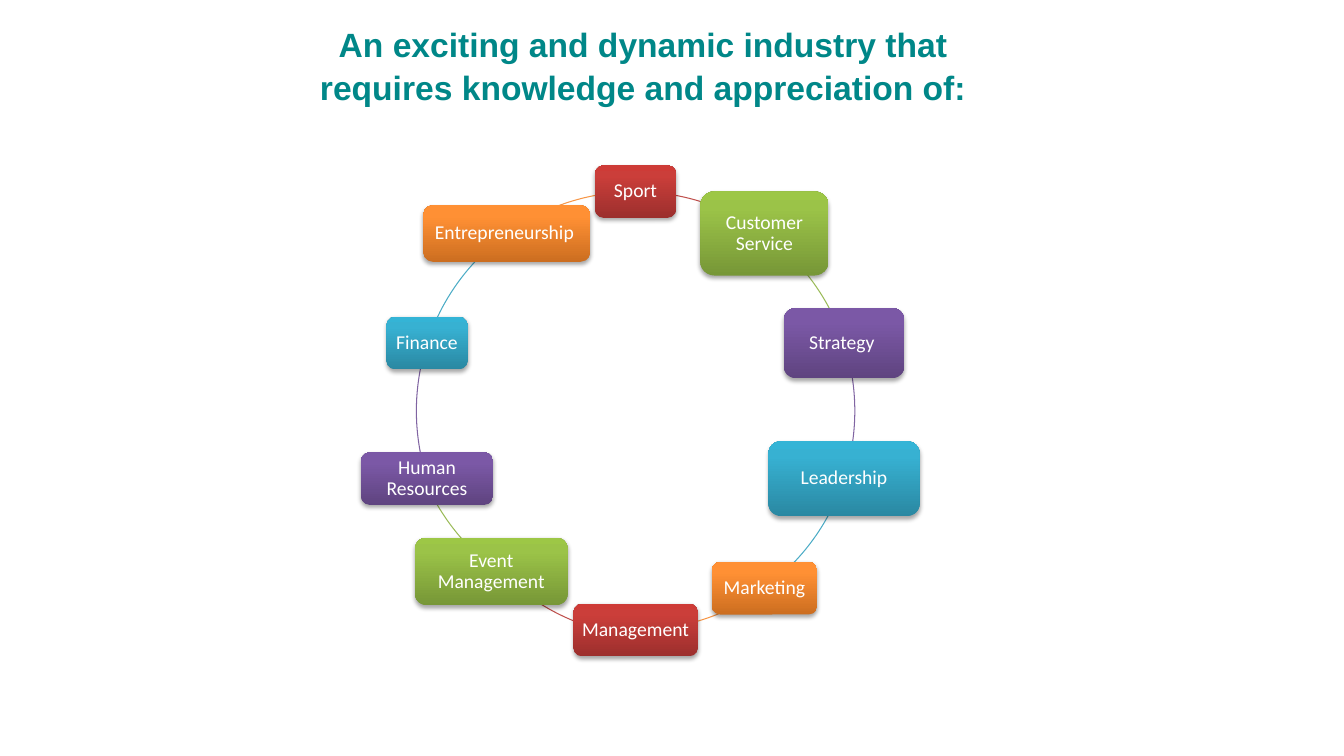
from copy import deepcopy
from math import cos, radians, sin

from pptx import Presentation
from pptx.dml.color import RGBColor as RGB
from pptx.enum.shapes import MSO_SHAPE as SHAPE
from pptx.enum.text import MSO_ANCHOR as ANCHOR, MSO_AUTO_SIZE as AUTO, PP_ALIGN as ALIGN
from pptx.oxml import parse_xml
from pptx.oxml.ns import nsdecls, qn
from pptx.util import Pt

COLORS = {
    "title": "008788",
    "text": "FFFFFF",
    "red": ("C0504D", "9C2F2D", "CB3E3A", "CE3B37"),
    "green": ("9BBB59", "779737", "9BC348", "9DC746"),
    "purple": ("8064A2", "5F4480", "7B58A6", "7C57A8"),
    "blue": ("4BACC6", "2A88A2", "37B1D2", "34B4D6"),
    "orange": ("F79646", "CC6E20", "FF9034", "FF9136"),
}
HUES = ("red", "green", "purple", "blue", "orange")
STOPS = (0, 0.8, 1)

TOPICS = (
    ("Sport", 58, 37.6),
    ("Customer Service", 91.6, 60),
    ("Strategy ", 86, 50),
    ("Leadership", 108, 53.5),
    ("Marketing", 75.6, 37.6),
    ("Management", 88.8, 37.6),
    ("Event Management", 109, 48.2),
    ("Human Resources", 94.4, 37.6),
    ("Finance", 58, 37.6),
    ("Entrepreneurship ", 119, 40.4),
)
MID_X, MID_Y, RADIUS = 454, 293.5, 156.6
STEP = 360 / len(TOPICS)
BOX_SHIFT = {"Event Management": (-11, -12)}
ARC_SHIFT = {"Management": (15, 5), "Event Management": (-6.5, -12)}

TITLE = {"size": Pt(24), "name": "Arial", "bold": True}
LABEL = {"size": Pt(14), "name": "Calibri", "bold": False}

SHADOW = (
    f'<a:outerShdw {nsdecls("a")} blurRad="40000" dist="23000" dir="5400000" '
    'rotWithShape="0"><a:srgbClr val="000000"><a:alpha val="35000"/>'
    '</a:srgbClr></a:outerShdw>'
)


def write(shape, text, style, color, inset, pitch):
    frame = shape.text_frame
    frame.word_wrap = True
    frame.auto_size = AUTO.NONE
    frame.vertical_anchor = ANCHOR.MIDDLE
    for side in ("left", "right", "top", "bottom"):
        setattr(frame, f"margin_{side}", Pt(inset))
    frame.text = text
    para = frame.paragraphs[0]
    para.alignment = ALIGN.CENTER
    para.line_spacing = pitch
    font = para.runs[0].font
    for key, value in style.items():
        setattr(font, key, value)
    font.color.rgb = RGB.from_string(color)


def add_title(slide, text):
    title = slide.shapes.title
    title.left, title.top = Pt(185), Pt(43.2)
    title.width, title.height = Pt(548.6), Pt(6)
    write(title, text, TITLE, COLORS["title"], 10, 1.06)


def add_arc(slide, start, hue, shift):
    left, top = MID_X - RADIUS + shift[0], MID_Y - RADIUS + shift[1]
    arc = slide.shapes.add_shape(
        SHAPE.ARC, Pt(left), Pt(top), Pt(2 * RADIUS), Pt(2 * RADIUS))
    for i in range(2):
        arc.adjustments[i] = (start + i * STEP) % 360 * 0.6
    arc.shadow.inherit = False
    arc.fill.background()
    arc.line.color.rgb = RGB.from_string(COLORS[hue][0])
    arc.line.width = Pt(0.75)


def shade(box, tones):
    box.fill.gradient()
    box.fill.gradient_angle = 90
    stops = box.element.spPr.find(".//" + qn("a:gsLst"))
    stops.append(deepcopy(stops[0]))
    for stop, tone, place in zip(box.fill.gradient_stops, tones, STOPS):
        stop.color.rgb = RGB.from_string(tone)
        stop.position = place


def add_box(slide, angle, hue, topic):
    text, width, height = topic
    shift = BOX_SHIFT.get(text, (0, 0))
    left = MID_X + RADIUS * cos(radians(angle)) - width / 2 + shift[0]
    top = MID_Y + RADIUS * sin(radians(angle)) - height / 2 + shift[1]
    box = slide.shapes.add_shape(
        SHAPE.ROUNDED_RECTANGLE, Pt(left), Pt(top), Pt(width), Pt(height))
    shade(box, COLORS[hue][1:])
    box.line.fill.background()
    box.shadow.inherit = False
    box.element.spPr.find(qn("a:effectLst")).append(parse_xml(SHADOW))
    write(box, text, LABEL, COLORS["text"], 4.2, 0.9)


def main():
    deck = Presentation()
    deck.slide_width, deck.slide_height = Pt(960), Pt(540)
    slide = deck.slides.add_slide(deck.slide_layouts[5])
    add_title(slide, "An exciting and dynamic industry that requires "
                     "knowledge and appreciation of:")
    ring = [(i * STEP - 90, HUES[i % len(HUES)], topic)
            for i, topic in enumerate(TOPICS)]
    for angle, hue, topic in ring:
        add_arc(slide, angle, hue, ARC_SHIFT.get(topic[0], (0, 0)))
    for angle, hue, topic in ring:
        add_box(slide, angle, hue, topic)
    deck.save("out.pptx")


if __name__ == "__main__":
    main()
